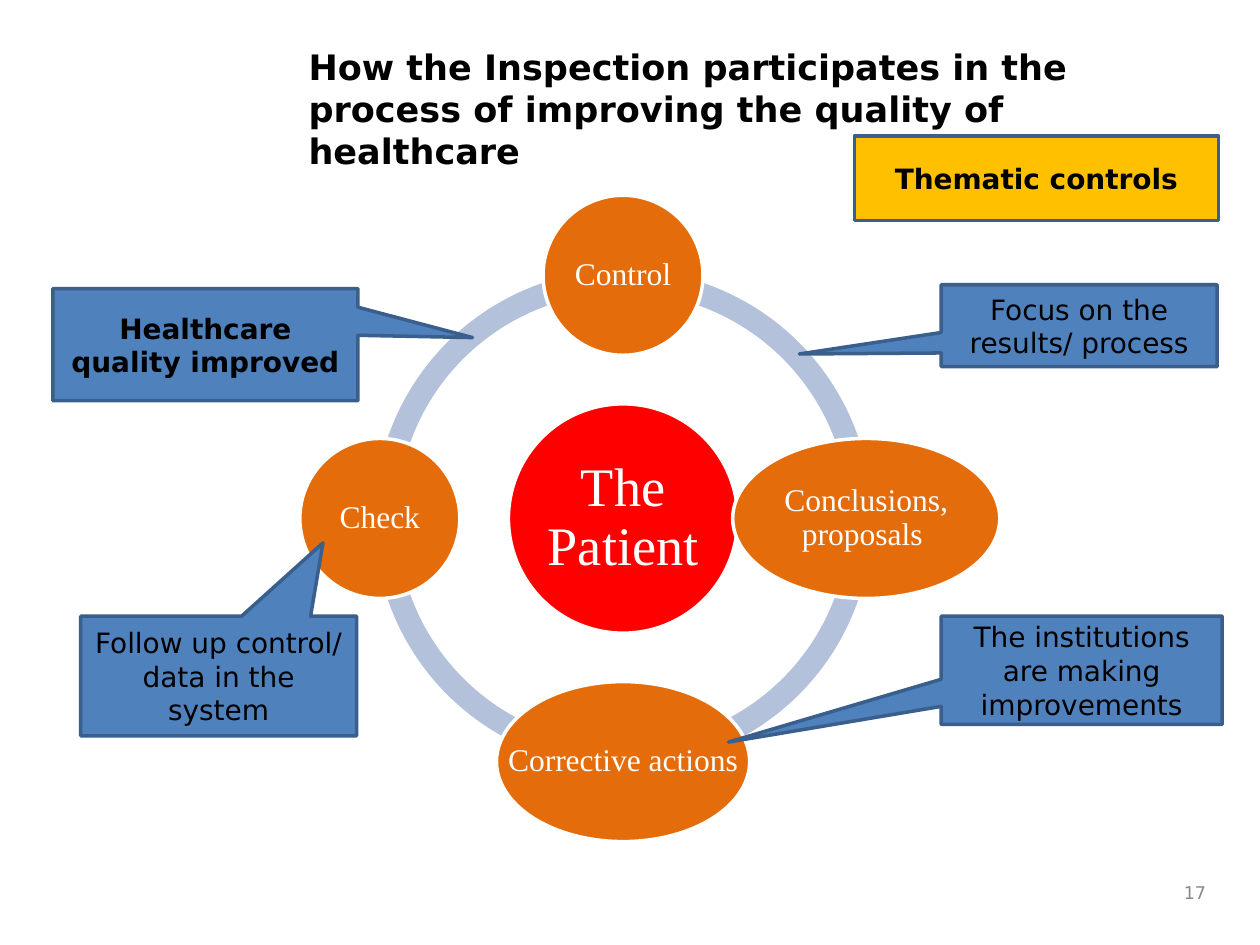
from math import cos, sin, radians
from pptx import Presentation
from pptx.util import Inches, Pt
from pptx.dml.color import RGBColor
from pptx.enum.shapes import MSO_SHAPE
from pptx.enum.text import MSO_ANCHOR, PP_ALIGN

HUES = {"ring": "B3C1DB", "core": "FF0000", "node": "E46C0A", "note": "4F81BD",
        "edge": "3A5F8C", "gold": "FFC000", "page": "898989",
        "white": "FFFFFF", "black": "000000"}
SANS, SERIF = "DejaVu Sans", "Times New Roman"
WIDE, HIGH = 10, 7.5

TITLE = "How the Inspection participates in the process of improving the quality of healthcare"
TOPIC = "Thematic controls"
CORE = "The Patient"
PAGE = "17"
NODES = [("Control", 1.27), ("Conclusions, proposals ", 2.12),
         ("Corrective actions", 2.01), ("Check", 1.27)]
NOTES = [
    ("Healthcare quality improved", (0.42, 2.29, 2.42, 0.89), (0.876, -0.063), True),
    ("Focus on the results/ process", (7.47, 2.26, 2.19, 0.65), (-1.014, 0.346), False),
    ("The institutions are making improvements", (7.47, 4.89, 2.23, 0.86), (-1.257, 0.663), False),
    ("Follow up control/ data in the system", (0.64, 4.89, 2.19, 0.95), (0.378, -1.112), False),
]
MID = (4.945, 4.115)
ORBIT, RING, HUB, TALL = 1.93, 3.95, 1.82, 1.27

deck = Presentation()
deck.slide_width, deck.slide_height = Inches(WIDE), Inches(HIGH)
slide = deck.slides.add_slide(deck.slide_layouts[6])


def color(name):
    return RGBColor.from_string(HUES[name])


def around(x, y, wide, high):
    return x - wide / 2, y - high / 2, wide, high


def draw(kind, box, fill, line=None, adjust=()):
    shape = slide.shapes.add_shape(kind, *map(Inches, box))
    shape.shadow.inherit = False
    shape.fill.solid()
    shape.fill.fore_color.rgb = color(fill)
    if line:
        shape.line.color.rgb = color(line)
        shape.line.width = Pt(2)
    else:
        shape.line.fill.background()
    for i, value in enumerate(adjust):
        shape.adjustments[i] = value
    return shape


def write(text, box=None, shape=None, size=16, font=SANS, hue="black", bold=False,
          align=PP_ALIGN.CENTER, anchor=MSO_ANCHOR.MIDDLE, inset=(0.1, 0.05), space=None):
    shape = shape or slide.shapes.add_textbox(*map(Inches, box))
    frame = shape.text_frame
    frame.word_wrap = True
    frame.vertical_anchor = anchor
    frame.margin_left = frame.margin_right = Inches(inset[0])
    frame.margin_top = frame.margin_bottom = Inches(inset[1])
    para = frame.paragraphs[0]
    para.alignment = align
    para.line_spacing = space
    run = para.add_run()
    run.text = text
    run.font.name, run.font.size, run.font.bold = font, Pt(size), bold
    run.font.color.rgb = color(hue)


def disc(text, box, fill, size, pad):
    draw(MSO_SHAPE.OVAL, box, fill, "white")
    write(text, box, size=size, font=SERIF, hue="white", inset=(pad, pad), space=0.9)


write(PAGE, (9.14, 6.92, 0.53, 0.33), size=10, hue="page", align=PP_ALIGN.RIGHT)

for start in (108, 54, 0, 162):
    draw(MSO_SHAPE.BLOCK_ARC, around(*MID, RING, RING), "ring",
         adjust=(start, (start + 54) % 216, 0.046))

disc(CORE, around(*MID, HUB, HUB), "core", 31, 0.04)
for i, (text, wide) in enumerate(NODES):
    turn = radians(90 * i - 90)
    x, y = MID[0] + ORBIT * cos(turn), MID[1] + ORBIT * sin(turn)
    disc(text, around(x, y, wide, TALL), "node", 18, 0.03)

for text, box, tip, bold in NOTES:
    note = draw(MSO_SHAPE.RECTANGULAR_CALLOUT, box, "note", "edge", tip)
    write(text, shape=note, bold=bold)

label = draw(MSO_SHAPE.RECTANGLE, (6.78, 1.08, 2.89, 0.67), "gold", "edge")
write(TOPIC, shape=label, bold=True)
write(TITLE, (2.35, 0.31, 7.31, 1.11), size=20, bold=True,
      align=PP_ALIGN.LEFT, anchor=MSO_ANCHOR.TOP)

deck.save("out.pptx")
